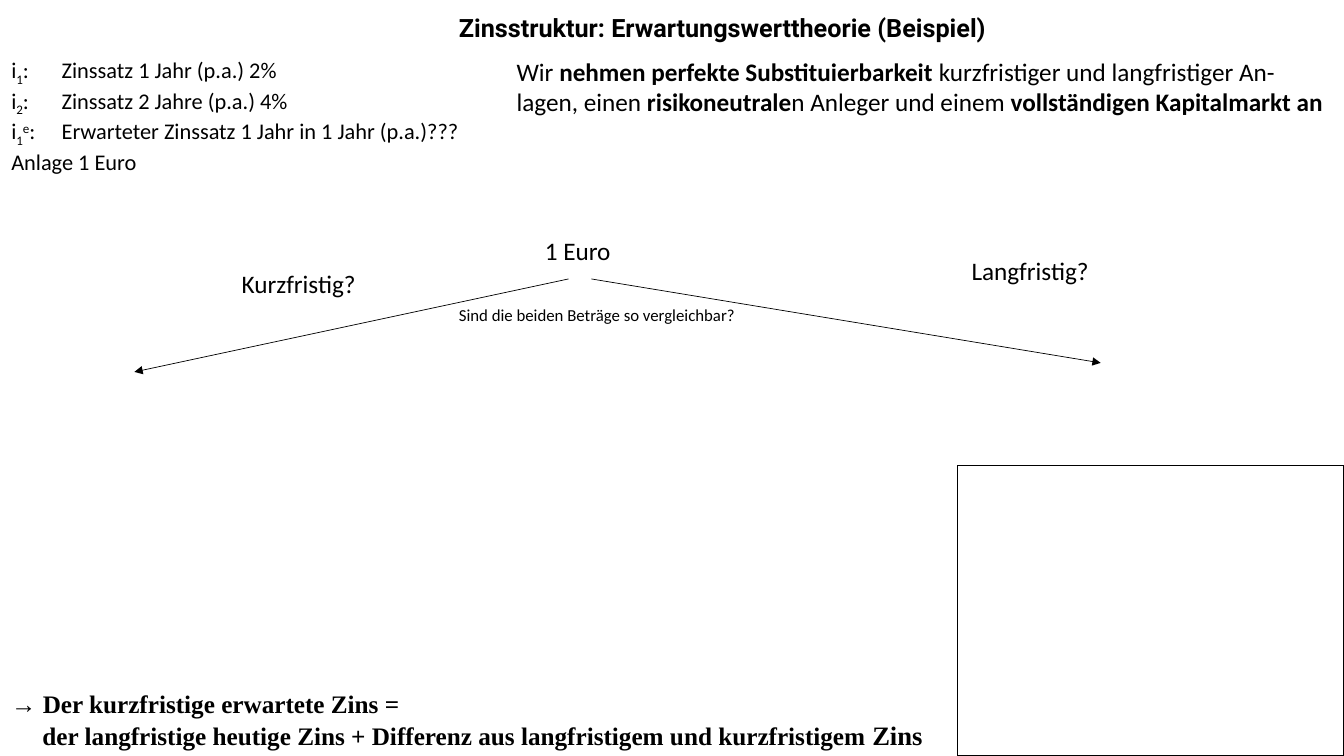
from lxml import etree
from pptx import Presentation
from pptx import util as u
from pptx.dml.color import RGBColor
from pptx.enum import shapes, text
from pptx.oxml.ns import qn

BLACK = RGBColor(0x00, 0x00, 0x00)
BOLD = {"bold": True}
SUB = {"baseline": -25}
SUPER = {"baseline": 30}


def add_run(paragraph, content, size=18, font="Calibri", bold=False, baseline=0):
    run = paragraph.add_run()
    run.text = content
    run.font.size = u.Pt(size)
    run.font.name = font
    run.font.bold = bold
    run.font.color.rgb = BLACK
    if baseline:
        run.font._element.set("baseline", str(baseline * 1000))


class Canvas:
    """Draws black elements on one slide, with lengths in percent of its size."""

    def __init__(self, presentation):
        self.width = presentation.slide_width
        self.height = presentation.slide_height
        self.slide = presentation.slides.add_slide(presentation.slide_layouts[6])

    def place(self, *lengths):
        sides = (self.width, self.height) * 2
        return [round(side * length / 100) for side, length in zip(sides, lengths)]

    def text(self, box, *paragraphs, wrap=True, grow=True,
             anchor=text.MSO_ANCHOR.TOP, **style):
        shape = self.slide.shapes.add_textbox(*self.place(*box))
        frame = shape.text_frame
        frame.word_wrap = wrap
        frame.vertical_anchor = anchor
        fit = text.MSO_AUTO_SIZE
        frame.auto_size = fit.SHAPE_TO_FIT_TEXT if grow else fit.NONE
        for index, runs in enumerate(paragraphs):
            paragraph = frame.add_paragraph() if index else frame.paragraphs[0]
            for content, extra in runs:
                add_run(paragraph, content, **{**style, **extra})
        return frame

    def arrow(self, start, end):
        connector = self.slide.shapes.add_connector(
            shapes.MSO_CONNECTOR.STRAIGHT, *self.place(*start, *end))
        connector.line.color.rgb = BLACK
        connector.line.width = u.Pt(0.5)
        line = connector.line._get_or_add_ln()
        etree.SubElement(line, qn("a:tailEnd"), type="triangle")
        etree.SubElement(connector._element.spPr, qn("a:effectLst"))

    def frame(self, box):
        shape = self.slide.shapes.add_shape(
            shapes.MSO_SHAPE.RECTANGLE, *self.place(*box))
        shape.shadow.inherit = False
        shape.fill.background()
        shape.line.color.rgb = BLACK
        shape.line.width = u.Pt(1)


def main():
    presentation = Presentation()
    presentation.slide_width = u.Inches(13.33)
    presentation.slide_height = u.Inches(7.5)
    canvas = Canvas(presentation)

    canvas.text((33.4, 0.9, 50.2, 5.5),
                [("Zinsstruktur: Erwartungswerttheorie (Beispiel)", BOLD)],
                font="Roboto", anchor=text.MSO_ANCHOR.MIDDLE)

    conclusion = canvas.text(
        (0.1, 90.4, 99.9, 5.9),
        [("→ ", {}), ("Der kurzfristige erwartete Zins =", BOLD)],
        [("der langfristige heutige Zins + Differenz aus langfristigem "
          "und kurzfristigem ", BOLD), ("Zins", {"bold": True, "size": 19})],
        font="Times New Roman", grow=False)
    indent = conclusion.paragraphs[1]._p.get_or_add_pPr()
    indent.set("marL", str(u.Inches(0.31)))

    for start, end in (((42.3, 36.9), (10, 49.2)), ((44, 36.9), (81.9, 48))):
        canvas.arrow(start, end)

    canvas.text(
        (0.1, 6.8, 42.7, 15.7),
        [("i", {}), ("1", SUB), (":\tZinssatz 1 Jahr (p.a.) 2%", {})],
        [("i", {}), ("2", SUB), (":\tZinssatz 2 Jahre (p.a.) 4%", {})],
        [("i", {}), ("1", SUB), ("e", SUPER),
         (":\tErwarteter Zinssatz 1 Jahr in 1 Jahr (p.a.)???", {})],
        [("Anlage 1 Euro", {})],
        size=16)

    canvas.text(
        (37.7, 6.8, 62.3, 9.5),
        [("Wir ", {}), ("nehmen perfekte Substituierbarkeit ", BOLD),
         ("kurzfristiger und langfristiger An- lagen, einen ", {}),
         ("risikoneutrale", BOLD), ("n Anleger und einem ", {}),
         ("vollständigen Kapitalmarkt an", BOLD)])

    for label, left, top, width in (("1 Euro", 39.8, 30.5, 6.5),
                                    ("Kurzfristig?", 17.25, 34.8, 10.1),
                                    ("Langfristig?", 71.55, 33.1, 10.35)):
        canvas.text((left, top, width, 5.3), [(label, {})], wrap=False)

    canvas.text((33.4, 39.7, 23.2, 4),
                [("Sind die beiden Beträge so vergleichbar?", {})], size=12)
    canvas.frame((71.25, 61.6, 28.75, 38.4))

    presentation.save("out.pptx")


if __name__ == "__main__":
    main()
